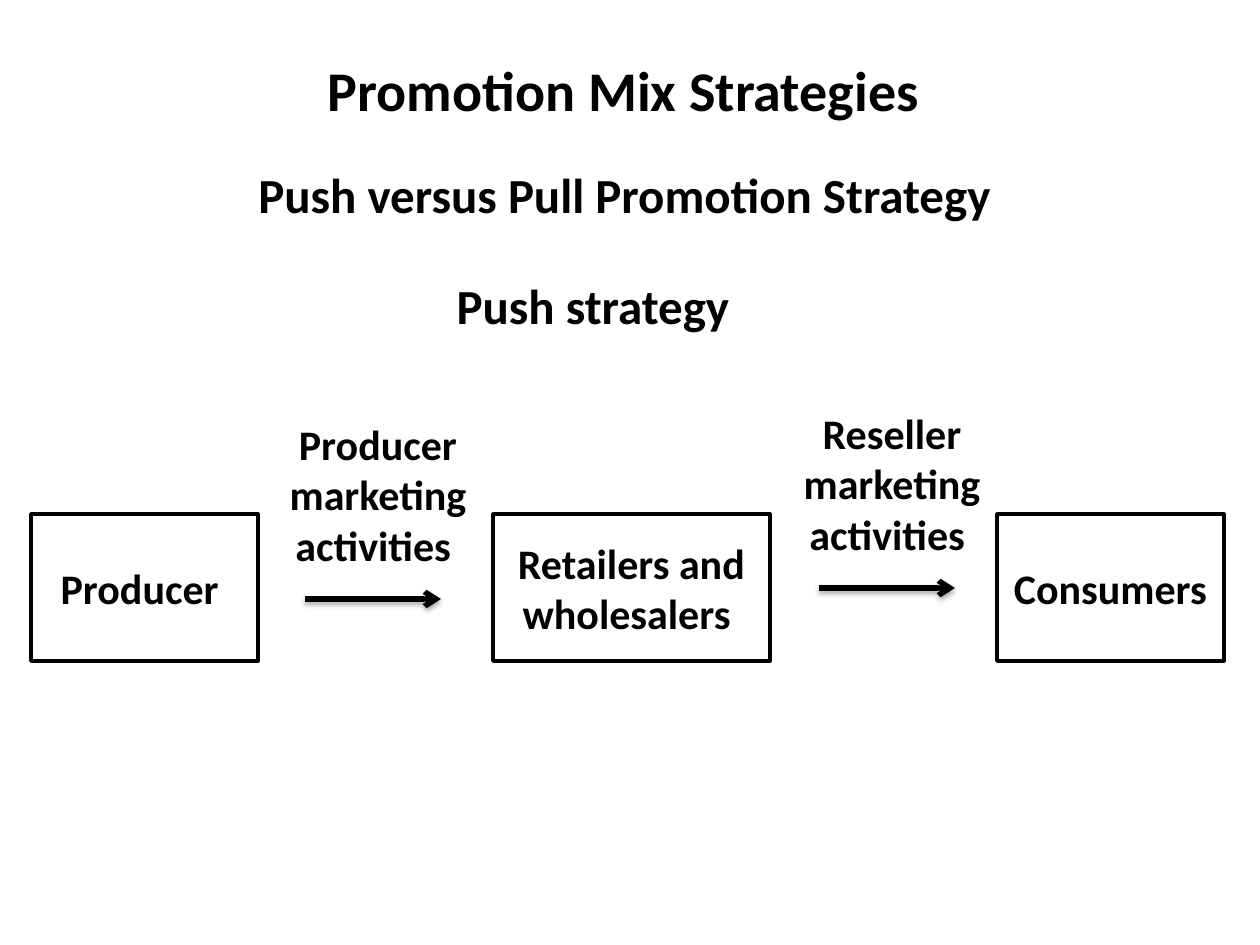
from lxml import etree
from pptx import Presentation, util as u
from pptx.dml.color import RGBColor
from pptx.enum import shapes, text
from pptx.oxml import ns

SCALE = u.Inches(1) / 126
COLOURS = {"ink": "000000", "paper": "FFFFFF"}


def px(length):
    return u.Emu(round(length * SCALE))


def colour(name):
    return RGBColor.from_string(COLOURS[name])


def write(shape, words, size):
    frame = shape.text_frame
    frame.word_wrap = True
    frame.vertical_anchor = text.MSO_ANCHOR.MIDDLE
    paragraph = frame.paragraphs[0]
    paragraph.text = words
    paragraph.alignment = text.PP_ALIGN.CENTER
    font_format = {"name": "Calibri", "size": u.Pt(size), "bold": True}
    for name, value in font_format.items():
        setattr(paragraph.font, name, value)
    paragraph.font.color.rgb = colour("ink")


def add_label(slide, box, words, size):
    write(slide.shapes.add_textbox(*map(px, box)), words, size)


def add_stage(slide, box, words):
    shape = slide.shapes.add_shape(shapes.MSO_SHAPE.RECTANGLE, *map(px, box))
    shape.shadow.inherit = False
    shape.fill.solid()
    shape.fill.fore_color.rgb = colour("paper")
    shape.line.color.rgb = colour("ink")
    shape.line.width = u.Pt(2)
    write(shape, words, 24)


def add_arrow(slide, left, top, width):
    """Draw a rightward arrow with a soft shadow below it."""
    arrow = slide.shapes.add_connector(
        shapes.MSO_CONNECTOR.STRAIGHT, px(left), px(top), px(left + width), px(top))
    arrow.line.color.rgb = colour("ink")
    arrow.line.width = u.Pt(3)
    etree.SubElement(arrow.line._get_or_add_ln(), ns.qn("a:tailEnd"), type="arrow")
    effects = etree.SubElement(arrow._element.spPr, ns.qn("a:effectLst"))
    shadow = etree.SubElement(
        effects, ns.qn("a:outerShdw"), blurRad=str(u.Pt(3.1)), dist=str(u.Pt(1.8)),
        dir="5400000", rotWithShape="0")
    tint = etree.SubElement(shadow, ns.qn("a:srgbClr"), val=COLOURS["ink"])
    etree.SubElement(tint, ns.qn("a:alpha"), val="35000")


def add_activity(slide, box, words):
    """Place an activity label with its arrow under it."""
    left, top, width, height = box
    add_label(slide, box, words, 24)
    add_arrow(slide, left + 53, top + height + 42, 136)


def add_headings(slide, box):
    left, top, width, height = box
    add_label(slide, (left, top, width, 136), "Promotion Mix Strategies ", 32)
    add_label(slide, (left, top + 115, width, 116), "Push versus Pull Promotion Strategy ", 28)
    add_label(slide, (left + 378, top + 252, 315, 63), "Push strategy ", 28)


def add_push_flow(slide, box):
    left, top, width, height = box
    stage_height = 147
    stage_top = top + height - stage_height
    stages = [
        (0, 227, "Producer "),
        (462, 277, "Retailers and wholesalers "),
        (966, 227, "Consumers "),
    ]
    activities = [
        (221, 11, "Producer marketing activities "),
        (735, 0, "Reseller marketing activities "),
    ]
    for offset, drop, words in activities:
        add_activity(slide, (left + offset, top + drop, 252, 126), words)
    for offset, stage_width, words in stages:
        add_stage(slide, (left + offset, stage_top, stage_width, stage_height), words)


def main():
    presentation = Presentation()
    presentation.slide_width = px(1260)
    presentation.slide_height = px(945)
    slide = presentation.slides.add_slide(presentation.slide_layouts[6])
    add_headings(slide, (63, 21, 1134, 315))
    add_push_flow(slide, (31, 420, 1193, 241))
    presentation.save("out.pptx")


if __name__ == "__main__":
    main()
